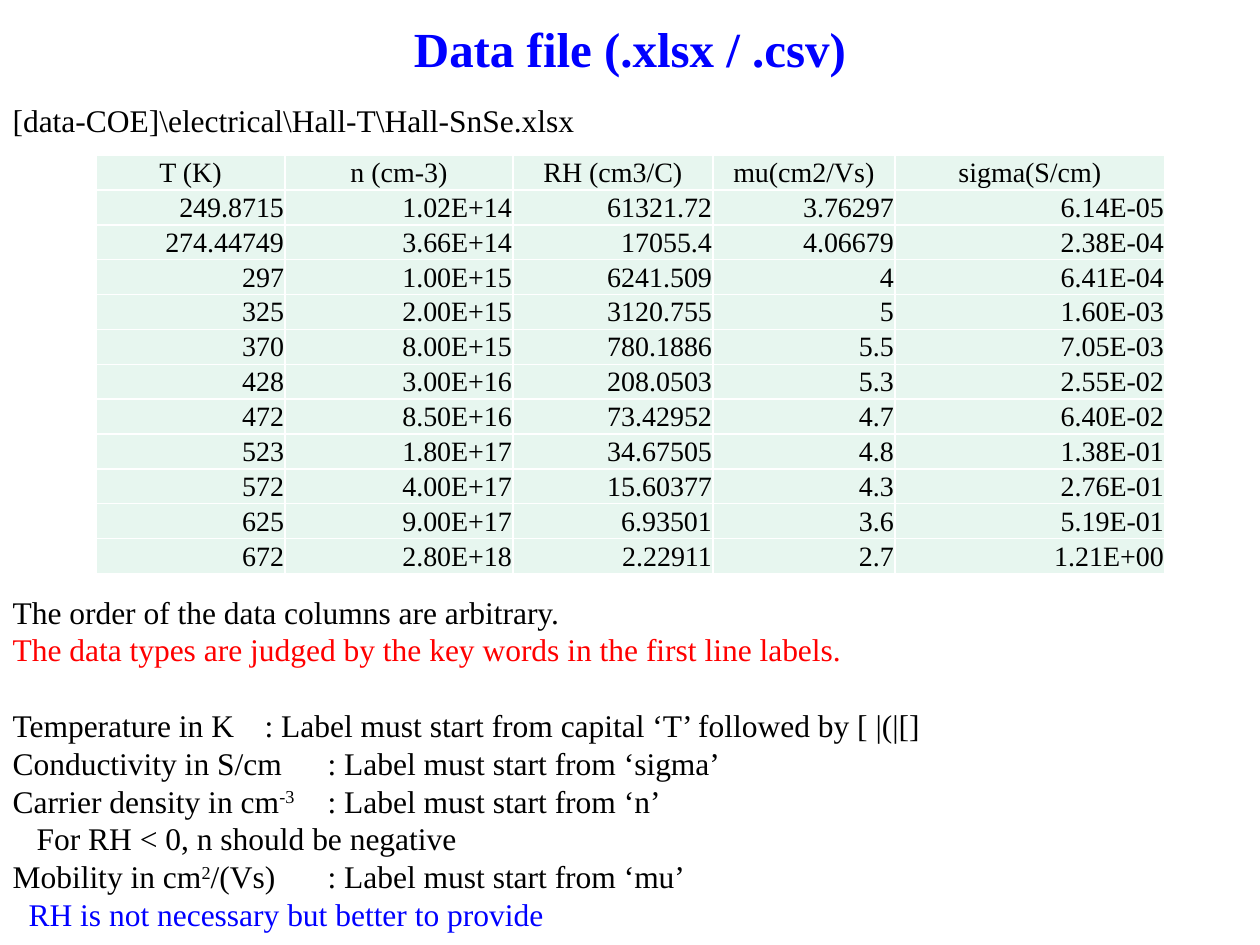
from lxml.etree import SubElement
from pptx import Presentation
from pptx.dml.color import RGBColor
from pptx.enum.text import MSO_ANCHOR, MSO_AUTO_SIZE, PP_ALIGN
from pptx.oxml.ns import qn
from pptx.util import Pt

EMU_PER_PX = 914400 // 126
FONT = "Times New Roman"
BLACK, BLUE, RED, MINT = "000000", "0000FF", "FF0000", "E7F6EF"
LINE_PITCH = 21.6
TAB_STOP = 378

COLUMN_WIDTHS = [189, 228, 200, 182, 270]
HALL_DATA = [
    ["T (K)", "n (cm-3)", "RH (cm3/C)", "mu(cm2/Vs)", "sigma(S/cm)"],
    ["249.8715", "1.02E+14", "61321.72", "3.76297", "6.14E-05"],
    ["274.44749", "3.66E+14", "17055.4", "4.06679", "2.38E-04"],
    ["297", "1.00E+15", "6241.509", "4", "6.41E-04"],
    ["325", "2.00E+15", "3120.755", "5", "1.60E-03"],
    ["370", "8.00E+15", "780.1886", "5.5", "7.05E-03"],
    ["428", "3.00E+16", "208.0503", "5.3", "2.55E-02"],
    ["472", "8.50E+16", "73.42952", "4.7", "6.40E-02"],
    ["523", "1.80E+17", "34.67505", "4.8", "1.38E-01"],
    ["572", "4.00E+17", "15.60377", "4.3", "2.76E-01"],
    ["625", "9.00E+17", "6.93501", "3.6", "5.19E-01"],
    ["672", "2.80E+18", "2.22911", "2.7", "1.21E+00"],
]

# Text with ^superscript^ marks, colour, free lines above, indent in px
BODY_LINES = [
    (r"[data-COE]\electrical\Hall-T\Hall-SnSe.xlsx", BLACK, 0, 0),
    ("The order of the data columns are arbitrary.", BLACK, 12, 0),
    ("The data types are judged by the key words in the first line labels.", RED, 0, 0),
    ("Temperature in K\t: Label must start from capital ‘T’ followed by [ |(|[]", BLACK, 1, 0),
    ("Conductivity in S/cm\t: Label must start from ‘sigma’", BLACK, 0, 0),
    ("Carrier density in cm^-3^\t: Label must start from ‘n’", BLACK, 0, 0),
    ("For RH < 0, n should be negative", BLACK, 0, 24),
    ("Mobility in cm^2^/(Vs)\t: Label must start from ‘mu’", BLACK, 0, 0),
    ("RH is not necessary but better to provide", BLUE, 0, 16),
]


def px(length):
    return length * EMU_PER_PX


def rgb(colour):
    return RGBColor.from_string(colour)


def place(shape, left, top, width, height):
    shape.left, shape.top = px(left), px(top)
    shape.width, shape.height = px(width), px(height)


def style_font(font, size, colour, bold=False):
    font.name, font.size, font.bold = FONT, Pt(size), bold
    font.color.rgb = rgb(colour)


def fill_title(title):
    place(title, 0, 0, 1260, 95)
    frame = title.text_frame
    frame.text = "Data file (.xlsx / .csv)"
    frame.vertical_anchor = MSO_ANCHOR.MIDDLE
    para = frame.paragraphs[0]
    para.alignment = PP_ALIGN.CENTER
    style_font(para.runs[0].font, 28, BLUE, bold=True)


def set_plain_layout(para, indent):
    """Drop the bullet, set the left margin and one tab stop."""
    properties = para._p.get_or_add_pPr()
    properties.set("marL", str(px(indent)))
    properties.set("indent", "0")
    SubElement(properties, qn("a:buNone"))
    tabs = SubElement(properties, qn("a:tabLst"))
    SubElement(tabs, qn("a:tab"), pos=str(px(TAB_STOP)), algn="l")


def fill_body(body):
    place(body, 0, 95, 1240, 853)
    frame = body.text_frame
    frame.word_wrap = True
    frame.auto_size = MSO_AUTO_SIZE.NONE
    frame.vertical_anchor = MSO_ANCHOR.TOP
    for index, (text, colour, free_lines, indent) in enumerate(BODY_LINES):
        para = frame.add_paragraph() if index else frame.paragraphs[0]
        para.alignment = PP_ALIGN.LEFT
        para.line_spacing = Pt(LINE_PITCH)
        para.space_before = Pt(free_lines * LINE_PITCH)
        para.space_after = Pt(0)
        set_plain_layout(para, indent)
        for part, piece in enumerate(text.split("^")):
            run = para.add_run()
            run.text = piece
            style_font(run.font, 18, colour)
            if part % 2:
                run._r.get_or_add_rPr().set("baseline", "30000")


def fill_cell(cell, text, alignment):
    cell.text = text
    cell.fill.solid()
    cell.fill.fore_color.rgb = rgb(MINT)
    cell.margin_left = cell.margin_right = cell.margin_top = px(1)
    cell.margin_bottom = 0
    cell.vertical_anchor = MSO_ANCHOR.MIDDLE
    para = cell.text_frame.paragraphs[0]
    para.alignment = alignment
    style_font(para.runs[0].font, 16, BLACK)


def add_data_table(slide):
    table = slide.shapes.add_table(
        len(HALL_DATA), len(COLUMN_WIDTHS),
        px(96), px(155), px(sum(COLUMN_WIDTHS)), px(419),
    ).table
    table.first_row = table.horz_banding = False
    for column, width in zip(table.columns, COLUMN_WIDTHS):
        column.width = px(width)
    for row, values in enumerate(HALL_DATA):
        alignment = PP_ALIGN.RIGHT if row else PP_ALIGN.CENTER
        for column, value in enumerate(values):
            fill_cell(table.cell(row, column), value, alignment)


def main():
    deck = Presentation()
    deck.slide_width, deck.slide_height = px(1260), px(945)
    slide = deck.slides.add_slide(deck.slide_layouts[1])
    fill_title(slide.shapes.title)
    fill_body(slide.placeholders[1])
    add_data_table(slide)
    deck.save("out.pptx")


if __name__ == "__main__":
    main()
